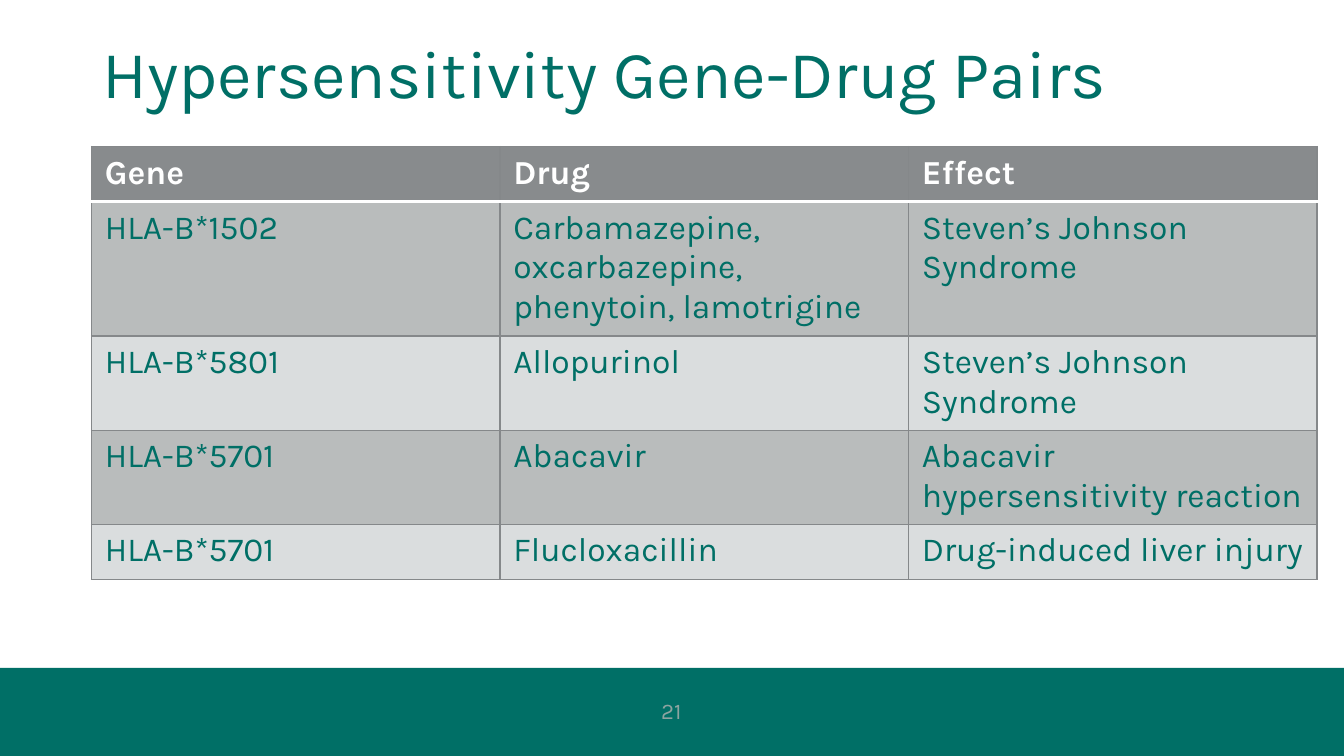
"""Build a slide with a table of hypersensitivity gene-drug pairs."""
from lxml.etree import SubElement
from pptx import Presentation
from pptx.dml.color import RGBColor
from pptx.enum.shapes import MSO_SHAPE as Shape
from pptx.enum.text import MSO_ANCHOR as Anchor, MSO_AUTO_SIZE as AutoSize, PP_ALIGN as Align
from pptx.oxml.ns import qn
from pptx.util import Inches, Pt

WIDTH = 10
HEIGHT = WIDTH * 9 / 16
TEAL, GRAY, LINE, WHITE = "006F66", "888B8D", "85888A", "FFFFFF"
BANDS = "B9BCBC", "DADDDE"
ROWS = [
    ("Gene", "Drug", "Effect"),
    ("HLA-B*1502", "Carbamazepine, oxcarbazepine, phenytoin, lamotrigine",
     "Steven’s Johnson Syndrome"),
    ("HLA-B*5801", "Allopurinol", "Steven’s Johnson Syndrome"),
    ("HLA-B*5701", "Abacavir", "Abacavir hypersensitivity reaction"),
    ("HLA-B*5701", "Flucloxacillin", "Drug-induced liver injury"),
]


def rgb(value):
    return RGBColor.from_string(value)


def paint(obj, color):
    obj.fill.solid()
    obj.fill.fore_color.rgb = rgb(color)


def write(tf, text, size, color, bold=False, align=Align.LEFT):
    tf.word_wrap = True
    p = tf.paragraphs[0]
    p.text, p.alignment = text, align
    font = p.font
    font.name, font.size, font.bold = "Karla", Pt(size), bold
    font.color.rgb = rgb(color)


def add_title(s, text):
    title = s.shapes.title
    title.left, title.top = Inches(0.66), Inches(0.18)
    title.width, title.height = Inches(9.12), Inches(0.66)
    tf = title.text_frame
    tf.auto_size, tf.vertical_anchor = AutoSize.NONE, Anchor.TOP
    write(tf, text, 36, TEAL)


def add_footer(s, number):
    band = s.shapes.add_shape(Shape.RECTANGLE, 0, Inches(4.97), Inches(WIDTH), Inches(HEIGHT - 4.97))
    band.shadow.inherit = False
    paint(band, TEAL)
    band.line.fill.background()
    box = s.shapes.add_textbox(Inches(3.87), Inches(5.14), Inches(2.25), Inches(0.3))
    box.text_frame.vertical_anchor = Anchor.MIDDLE
    write(box.text_frame, number, 12, "8CA4A0", align=Align.CENTER)


def set_border(cell, index, side, color, width):
    props = cell._tc.get_or_add_tcPr()
    line = SubElement(props, qn(f"a:ln{side}"), w=str(Pt(width)))
    fill = SubElement(line, qn("a:solidFill"))
    SubElement(fill, qn("a:srgbClr"), val=color)
    props.insert(index, line)


def add_table(s, rows):
    frame = s.shapes.add_table(len(rows), len(rows[0]), Inches(0.68), Inches(1.09),
                               Inches(9.12), Inches(0.41 * len(rows)))
    frame.height = Inches(3.21)
    for i, row in enumerate(rows):
        for j, text in enumerate(row):
            cell = frame.table.cell(i, j)
            header = i == 0
            paint(cell, GRAY if header else BANDS[(i - 1) % 2])
            write(cell.text_frame, text, 18, WHITE if header else TEAL, bold=header)
            for k, side in enumerate("LRTB"):
                divider = (i, side) in ((0, "B"), (1, "T"))
                set_border(cell, k, side, *((WHITE, 2) if divider else (LINE, 0.75)))


def main():
    prs = Presentation()
    prs.slide_width, prs.slide_height = Inches(WIDTH), Inches(HEIGHT)
    s = prs.slides.add_slide(prs.slide_layouts[5])
    add_footer(s, "21")
    add_title(s, "Hypersensitivity Gene-Drug Pairs")
    add_table(s, ROWS)
    prs.save("out.pptx")


if __name__ == "__main__":
    main()
